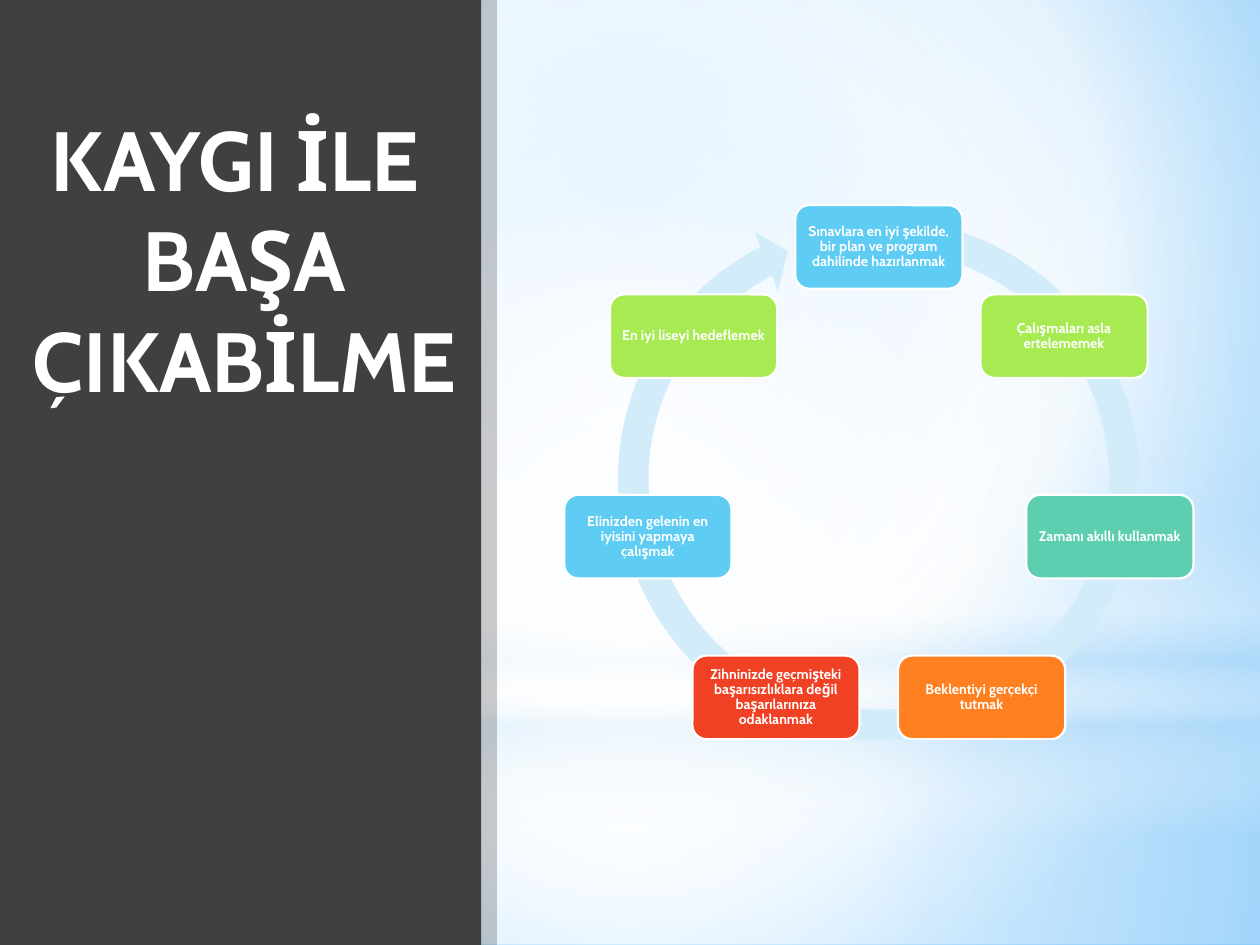
from math import cos, pi, sin

from lxml.etree import SubElement
from pptx import Presentation
from pptx.dml.color import RGBColor
from pptx.enum.shapes import MSO_SHAPE
from pptx.enum.text import MSO_ANCHOR, PP_ALIGN
from pptx.oxml.ns import qn
from pptx.util import Pt

# Content
TITLE = "KAYGI İLE \vBAŞA ÇIKABİLME"
STEPS = [  # clockwise from the top: text, colour name
    ("Sınavlara en iyi şekilde, bir plan ve program dahilinde hazırlanmak", "blue"),
    ("Çalışmaları asla ertelememek", "lime"),
    ("Zamanı akıllı kullanmak", "teal"),
    ("Beklentiyi gerçekçi tutmak", "orange"),
    ("Zihninizde geçmişteki başarısızlıklara değil başarılarınıza odaklanmak", "red"),
    ("Elinizden gelenin en iyisini yapmaya çalışmak", "blue"),
    ("En iyi liseyi hedeflemek", "lime"),
]

THEME = {
    "font": "Cabin", "title_size": 48, "step_size": 8,
    "white": "FFFFFF", "black": "000000", "panel": "404040", "ring": "D2ECFA",
    "blue": "5ECCF3", "lime": "A7EA52", "teal": "5DCEAF",
    "orange": "FF8021", "red": "F14124",
    "sky": "B4DCFA", "bg_light": "9ED5FF", "bg_deep": "5BB9FF",
}

# Geometry in points
W, H = 720, 540
PANEL_W, EDGE_W = 275, 9
CENTER_X, CENTER_Y, RADIUS = 502.2, 276.5, 135.4
STEP_W, STEP_H = 95.5, 47.7
RING_SIZE, RING_TOP = 317.5, 115.2
RING_ADJ = (0.055, 3.307, 145.627, 169.234, 0.058)

# Backdrop: shape, box, stops (position, colour, opacity), focus or angle
CENTERED = (50, 50, 50, 50)
BACKGROUND = [(0, "bg_light", 100), (60, "white", 100), (100, "bg_deep", 100)]
BACKDROP = [
    (MSO_SHAPE.RECTANGLE, (0, 402, W, 138),
     [(0, "white", 91), (37, "white", 76), (100, "sky", 79)], CENTERED),
    (MSO_SHAPE.RECTANGLE, (0, 0, W, 402),
     [(0, "white", 89), (48, "white", 62), (100, "sky", 79)], CENTERED),
    (MSO_SHAPE.RECTANGLE, (0, 297, W, 180),
     [(0, "white", 0), (29, "white", 30), (45, "sky", 40), (55, "white", 26),
      (65, "sky", 60), (100, "white", 0)], 90),
    (MSO_SHAPE.OVAL, (0, 126, W, 402),
     [(0, "white", 100), (56, "white", 0)], CENTERED),
]


def rgb(name):
    return RGBColor.from_string(THEME[name])


def set_alpha(color, opacity):
    SubElement(color, qn("a:alpha"), val=str(opacity * 1000))


def set_gradient(fill, parent, stops, direction):
    """Fill with a radial gradient (focus box) or a linear one (angle)."""
    fill.solid()
    old = parent.find(qn("a:solidFill"))
    grad = SubElement(parent, qn("a:gradFill"), rotWithShape="1")
    parent.replace(old, grad)
    stop_list = SubElement(grad, qn("a:gsLst"))
    for pos, name, opacity in stops:
        gs = SubElement(stop_list, qn("a:gs"), pos=str(pos * 1000))
        color = SubElement(gs, qn("a:srgbClr"), val=THEME[name])
        if opacity < 100:
            set_alpha(color, opacity)
    if isinstance(direction, tuple):
        focus = SubElement(grad, qn("a:path"), path="circle")
        sides = {side: str(v * 1000) for side, v in zip("ltrb", direction)}
        SubElement(focus, qn("a:fillToRect"), **sides)
    else:
        SubElement(grad, qn("a:lin"), ang=str(direction * 60000), scaled="0")


def add_shape(s, kind, box, color=None, line=None):
    sp = s.shapes.add_shape(kind, *map(Pt, box))
    sp.shadow.inherit = False
    if color:
        sp.fill.solid()
        sp.fill.fore_color.rgb = rgb(color)
    if line:
        sp.line.color.rgb = rgb(line)
        sp.line.width = Pt(1.25)
    else:
        sp.line.fill.background()
    return sp


def set_text(sp, text, size, anchor=MSO_ANCHOR.MIDDLE, margins=(2.5, 2.5), spacing=1.0):
    tf = sp.text_frame
    tf.text = text
    tf.word_wrap = True
    tf.vertical_anchor = anchor
    tf.margin_left = tf.margin_right = Pt(margins[0])
    tf.margin_top = tf.margin_bottom = Pt(margins[1])
    p = tf.paragraphs[0]
    p.alignment = PP_ALIGN.CENTER
    p.line_spacing = spacing
    for r in p.runs:
        r.font.name = THEME["font"]
        r.font.size = Pt(size)
        r.font.bold = True
        r.font.color.rgb = rgb("white")


def main():
    prs = Presentation()
    prs.slide_width, prs.slide_height = Pt(W), Pt(H)
    s = prs.slides.add_slide(prs.slide_layouts[5])

    # Background and soft light layers
    bg_fill = s.background.fill
    bg_fill.solid()
    set_gradient(bg_fill, next(s.element.iter(qn("p:bgPr"))), BACKGROUND, (20, 10, 20, 60))
    for kind, box, stops, direction in BACKDROP:
        sp = add_shape(s, kind, box)
        set_gradient(sp.fill, sp.element.spPr, stops, direction)

    # Dark title panel with a translucent edge
    add_shape(s, MSO_SHAPE.RECTANGLE, (0, 0, PANEL_W, H), "panel")
    title = s.shapes.title
    title.left, title.top, title.width, title.height = map(Pt, (0, 57.6, 279.4, 425.5))
    set_text(title, TITLE, THEME["title_size"], MSO_ANCHOR.TOP, (7.2, 3.6))
    title.element.getparent().append(title.element)  # bring above the panel
    edge = add_shape(s, MSO_SHAPE.RECTANGLE, (PANEL_W, 0, EDGE_W, H), "black")
    set_alpha(next(edge.element.spPr.iter(qn("a:srgbClr"))), 20)

    # Ring arrow
    ring = add_shape(s, MSO_SHAPE.CIRCULAR_ARROW,
                     (CENTER_X - RING_SIZE / 2, RING_TOP, RING_SIZE, RING_SIZE), "ring")
    for i, value in enumerate(RING_ADJ):
        ring.adjustments[i] = value

    # Steps spaced evenly around the ring
    for i, (text, color) in enumerate(STEPS):
        angle = 2 * pi * i / len(STEPS)
        x = CENTER_X + RADIUS * sin(angle) - STEP_W / 2
        y = CENTER_Y - RADIUS * cos(angle) - STEP_H / 2
        sp = add_shape(s, MSO_SHAPE.ROUNDED_RECTANGLE, (x, y, STEP_W, STEP_H), color, "white")
        set_text(sp, text, THEME["step_size"], spacing=0.9)

    prs.save("out.pptx")


if __name__ == "__main__":
    main()
